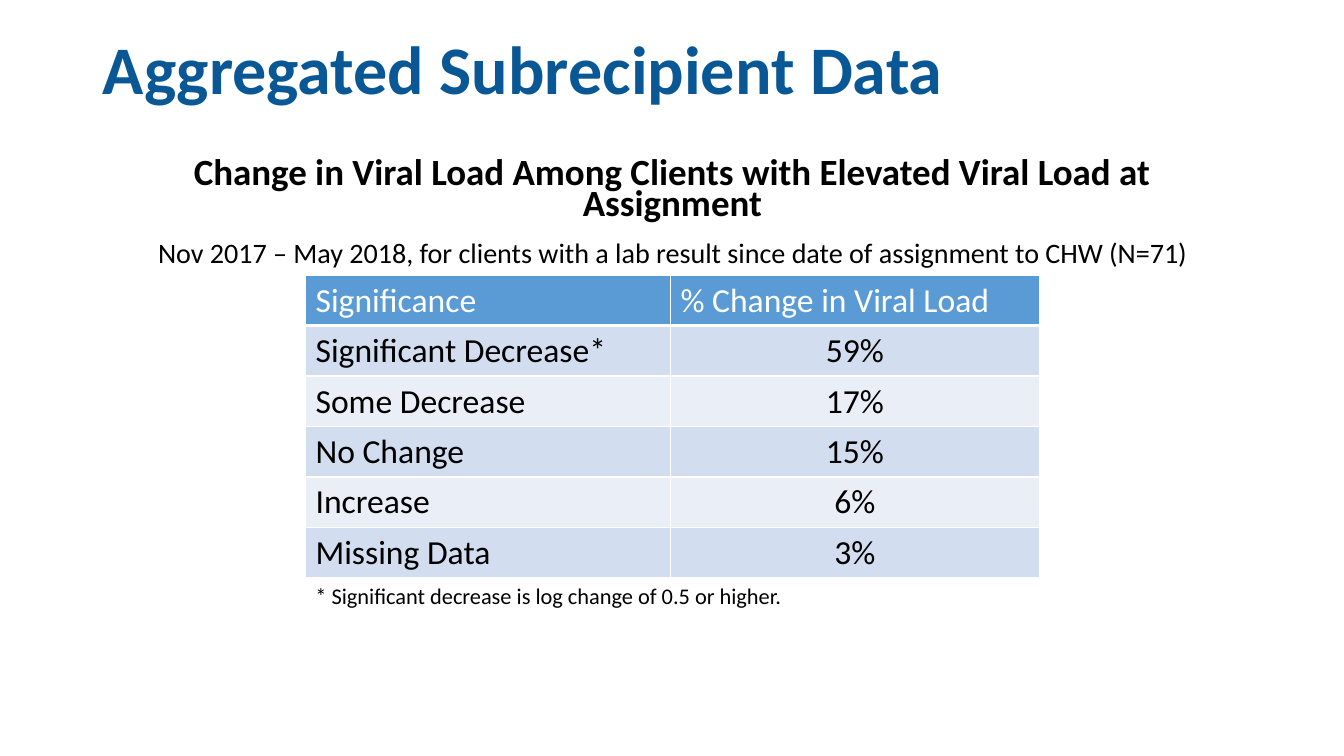
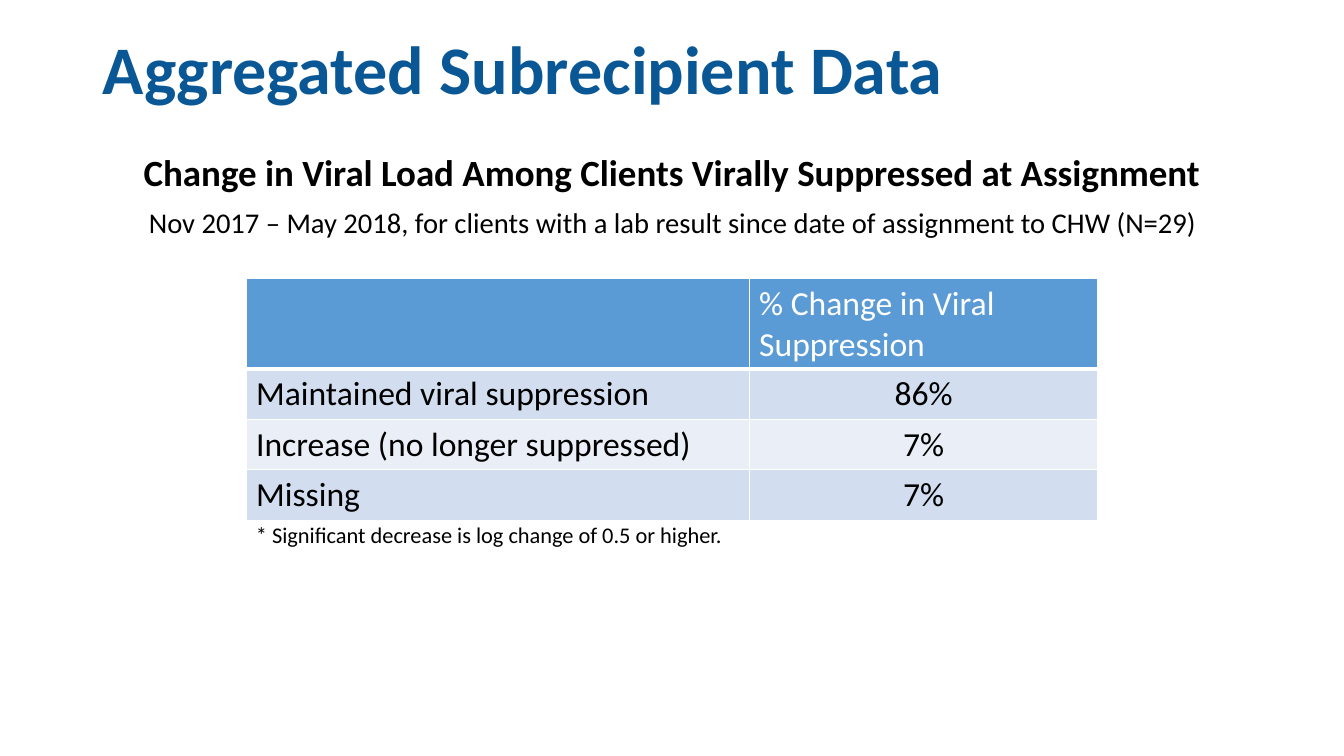
from dataclasses import dataclass

from lxml.etree import SubElement
from pptx import Presentation
from pptx.dml.color import RGBColor
from pptx.enum.text import MSO_ANCHOR, MSO_AUTO_SIZE, PP_ALIGN
from pptx.oxml.ns import qn
from pptx.util import Inches, Pt


@dataclass(frozen=True)
class Theme:
    font: str = "Calibri"
    title: str = "095895"
    text: str = "000000"
    light: str = "FFFFFF"
    header: str = "5B9BD5"
    bands: tuple = ("D2DEEF", "EAEFF7")
    title_size: float = 48.6
    heading_size: float = 26.4
    table_size: float = 24
    note_size: float = 16


THEME = Theme()
TITLE = "Aggregated Subrecipient Data"
FOOTNOTE = "* Significant decrease is log change of 0.5 or higher."
MARGIN, CONTENT_WIDTH = 0.92, 11.5
ROW_HEIGHT = 0.5


def style(para, size, color=THEME.text, bold=False, align=PP_ALIGN.LEFT):
    para.alignment = align
    font = para.font
    font.name, font.size, font.bold = THEME.font, Pt(size), bold
    font.color.rgb = RGBColor.from_string(color)


def add_title(page):
    title = page.shapes.title
    title.left, title.top = Inches(MARGIN), Inches(0.26)
    title.width, title.height = Inches(CONTENT_WIDTH), Inches(0.91)
    frame = title.text_frame
    frame.text = TITLE
    frame.auto_size = MSO_AUTO_SIZE.NONE
    frame.vertical_anchor = MSO_ANCHOR.MIDDLE
    para = frame.paragraphs[0]
    para.line_spacing = 0.9
    style(para, THEME.title_size, THEME.title, bold=True)


def add_text_box(page, left, top, width, height):
    box = page.shapes.add_textbox(
        Inches(left), Inches(top), Inches(width), Inches(height))
    box.text_frame.word_wrap = True
    return box.text_frame


def add_heading(page, top, heading, subtitle, subtitle_size):
    frame = add_text_box(page, MARGIN, top, CONTENT_WIDTH, 1.01)
    frame.text = f"{heading}\n{subtitle}"
    first, second = frame.paragraphs
    style(first, THEME.heading_size, bold=True, align=PP_ALIGN.CENTER)
    style(second, subtitle_size, align=PP_ALIGN.CENTER)
    for para in (first, second):
        para.line_spacing = 0.7
        para.space_after = Pt(6)
    second.space_before = Pt(10)


def add_borders(cell, bottom):
    properties = cell._tc.get_or_add_tcPr()
    for side, width in (("L", 1), ("R", 1), ("T", 1), ("B", bottom)):
        line = SubElement(properties, qn(f"a:ln{side}"), w=str(Pt(width)))
        fill = SubElement(line, qn("a:solidFill"))
        SubElement(fill, qn("a:srgbClr"), val=THEME.light)


def add_table(page, left, top, widths, header_height, rows):
    height = header_height + ROW_HEIGHT * (len(rows) - 1)
    table = page.shapes.add_table(
        len(rows), len(widths), Inches(left), Inches(top),
        Inches(sum(widths)), Inches(height)).table
    for column, width in zip(table.columns, widths):
        column.width = Inches(width)
    for r, values in enumerate(rows):
        is_header = r == 0
        table.rows[r].height = Inches(header_height if is_header else ROW_HEIGHT)
        band = THEME.header if is_header else THEME.bands[(r - 1) % 2]
        color = THEME.light if is_header else THEME.text
        for c, value in enumerate(values):
            cell = table.cell(r, c)
            add_borders(cell, bottom=3 if is_header else 1)
            cell.fill.solid()
            cell.fill.fore_color.rgb = RGBColor.from_string(band)
            cell.text = value
            centred = c > 0 and not is_header
            style(cell.text_frame.paragraphs[0], THEME.table_size, color,
                  align=PP_ALIGN.CENTER if centred else PP_ALIGN.LEFT)


def add_footnote(page, left, top):
    frame = add_text_box(page, left, top, 6.12, 0.37)
    frame.text = FOOTNOTE
    style(frame.paragraphs[0], THEME.note_size)


def add_page(deck, heading, table, note_top):
    page = deck.slides.add_slide(deck.slide_layouts[5])
    add_title(page)
    add_heading(page, **heading)
    add_table(page, **table)
    add_footnote(page, table["left"], note_top)


def main():
    deck = Presentation()
    deck.slide_width, deck.slide_height = Inches(13.33), Inches(7.5)

    # Clients with elevated viral load
    add_page(
        deck,
        heading=dict(
            top=1.54,
            heading="Change in Viral Load Among Clients with Elevated Viral Load at Assignment",
            subtitle="Nov 2017 – May 2018, for clients with a lab result since date of assignment to CHW (N=71)",
            subtitle_size=20.1),
        table=dict(
            left=3.03, top=2.73, widths=(3.62, 3.66), header_height=ROW_HEIGHT,
            rows=(("Significance", "% Change in Viral Load"),
                  ("Significant Decrease*", "59%"),
                  ("Some Decrease", "17%"),
                  ("No Change", "15%"),
                  ("Increase", "6%"),
                  ("Missing Data", "3%"))),
        note_top=5.73)

    # Clients already virally suppressed
    add_page(
        deck,
        heading=dict(
            top=1.55,
            heading="Change in Viral Load Among Clients Virally Suppressed at Assignment",
            subtitle="Nov 2017 – May 2018, for clients with a lab result since date of assignment to CHW (N=29)",
            subtitle_size=20.4),
        table=dict(
            left=2.44, top=2.76, widths=(4.99, 3.46), header_height=0.9,
            rows=(("", "% Change in Viral Suppression"),
                  ("Maintained viral suppression", "86%"),
                  ("Increase (no longer suppressed)", "7%"),
                  ("Missing", "7%"))),
        note_top=5.12)

    deck.save("out.pptx")


if __name__ == "__main__":
    main()
